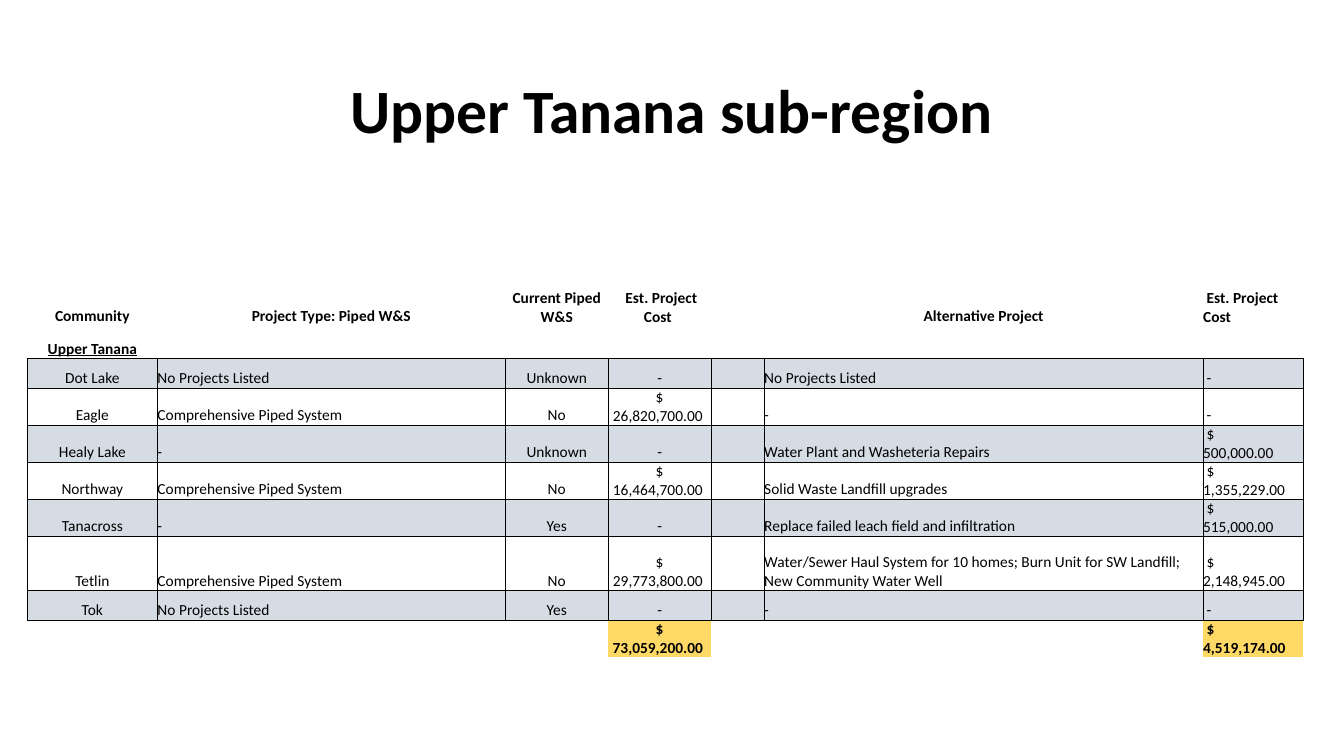
from lxml.etree import SubElement
from pptx import Presentation
from pptx.dml.color import RGBColor
from pptx.enum.text import MSO_ANCHOR as Anchor, PP_ALIGN as Align
from pptx.oxml.ns import qn
from pptx.util import Pt

BLACK = RGBColor(0x00, 0x00, 0x00)
BAND = RGBColor(0xD6, 0xDC, 0xE4)
GOLD = RGBColor(0xFF, 0xD9, 0x66)
FONT = "Calibri"
CELL_SIZE = 11
NO_GRID_STYLE = "{2D5ABB26-0587-4C30-8999-92F81FD0307C}"

COLUMN_WIDTHS = [93, 248.5, 73.5, 73.5, 38, 313.5, 71.5]
ROW_HEIGHTS = [23, 23] + [21.1] * 5 + [39, 21.1, 21.1]
LEFT_COLUMNS = {1, 5, 6}
COST_COLUMN = 6
PIPED = "Comprehensive Piped System"
NONE_LISTED = "No Projects Listed"

HEADER = ["Community", "Project Type: Piped W&S", "Current Piped W&S",
          " Est. Project Cost ", "", "Alternative Project", " Est. Project Cost"]
SUB_REGION = ["Upper Tanana"] + [""] * 6
# A vertical tab is a line break between the dollar sign and the amount
PROJECTS = [
    ["Dot Lake", NONE_LISTED, "Unknown", " - ", "", NONE_LISTED, " -"],
    ["Eagle", PIPED, "No", " $ \v26,820,700.00 ", "", "-", " -"],
    ["Healy Lake", "-", "Unknown", " - ", "",
     "Water Plant and Washeteria Repairs", " $ \v500,000.00"],
    ["Northway", PIPED, "No", " $ \v16,464,700.00 ", "",
     "Solid Waste Landfill upgrades", " $ \v1,355,229.00"],
    ["Tanacross", "-", "Yes", " - ", "",
     "Replace failed leach field and infiltration", " $ \v515,000.00"],
    ["Tetlin", PIPED, "No", " $ \v29,773,800.00 ", "",
     "Water/Sewer Haul System for 10 homes; Burn Unit for SW Landfill; "
     "New Community Water Well", " $ \v2,148,945.00"],
    ["Tok", NONE_LISTED, "Yes", " - ", "", "-", " -"],
]
TOTALS = ["", "", "", " $ \v73,059,200.00 ", "", "", " $ \v4,519,174.00"]


def style_para(para, size, align, bold=False, underline=False):
    para.alignment = align
    for span in para.runs:
        font = span.font
        font.name, font.size, font.bold = FONT, Pt(size), bold
        font.underline = underline
        font.color.rgb = BLACK
    if not para.runs:
        # Keeps an empty cell from stretching its row
        SubElement(para._p, qn("a:endParaRPr"), sz=str(size * 100))


def add_title(page, left, top, width, height):
    box = page.shapes.add_textbox(Pt(left), Pt(top), Pt(width), Pt(height))
    frame = box.text_frame
    frame.word_wrap = True
    frame.vertical_anchor = Anchor.MIDDLE
    frame.text = "Upper Tanana sub-region"
    frame.paragraphs[0].line_spacing = 0.9
    style_para(frame.paragraphs[0], 44, Align.CENTER, bold=True)


def add_borders(cell, sides):
    properties = cell._tc.get_or_add_tcPr()
    for side in sides:
        line = SubElement(properties, qn("a:ln" + side), w=str(Pt(0.5)))
        fill = SubElement(line, qn("a:solidFill"))
        SubElement(fill, qn("a:srgbClr"), val=str(BLACK))


def fill_cell(cell, text, align, bold, underline, sides, color):
    cell.margin_left = cell.margin_right = 0
    cell.margin_top = cell.margin_bottom = 0
    cell.vertical_anchor = Anchor.BOTTOM
    cell.text_frame.text = text
    style_para(cell.text_frame.paragraphs[0], CELL_SIZE, align, bold, underline)
    add_borders(cell, sides)
    if color is None:
        cell.fill.background()
    else:
        cell.fill.solid()
        cell.fill.fore_color.rgb = color


def add_cost_table(page, left, top):
    rows = [HEADER, SUB_REGION, *PROJECTS, TOTALS]
    last = len(rows) - 1
    table = page.shapes.add_table(
        len(rows), len(COLUMN_WIDTHS), Pt(left), Pt(top),
        Pt(sum(COLUMN_WIDTHS)), Pt(sum(ROW_HEIGHTS))).table
    table.first_row = table.horz_banding = False
    table._tbl.tblPr.find(qn("a:tableStyleId")).text = NO_GRID_STYLE
    for column, width in zip(table.columns, COLUMN_WIDTHS):
        column.width = Pt(width)
    for row, height in zip(table.rows, ROW_HEIGHTS):
        row.height = Pt(height)

    for r, texts in enumerate(rows):
        is_project = 1 < r < last
        # Only the project rows carry the full grid
        sides = "LRTB" if is_project else {1: "B", last: "T"}.get(r, "")
        for c, text in enumerate(texts):
            color = None
            if is_project and r % 2 == 0:
                color = BAND
            elif r == last and text:
                color = GOLD
            to_left = c == COST_COLUMN or (is_project and c in LEFT_COLUMNS)
            fill_cell(table.cell(r, c), text,
                      Align.LEFT if to_left else Align.CENTER,
                      not is_project, r == 1, sides, color)


def main():
    deck = Presentation()
    deck.slide_width, deck.slide_height = Pt(960), Pt(540)
    page = deck.slides.add_slide(deck.slide_layouts[6])
    add_title(page, 66, 28.8, 828, 104.4)
    add_cost_table(page, 19.5, 206.5)
    deck.save("out.pptx")


if __name__ == "__main__":
    main()
